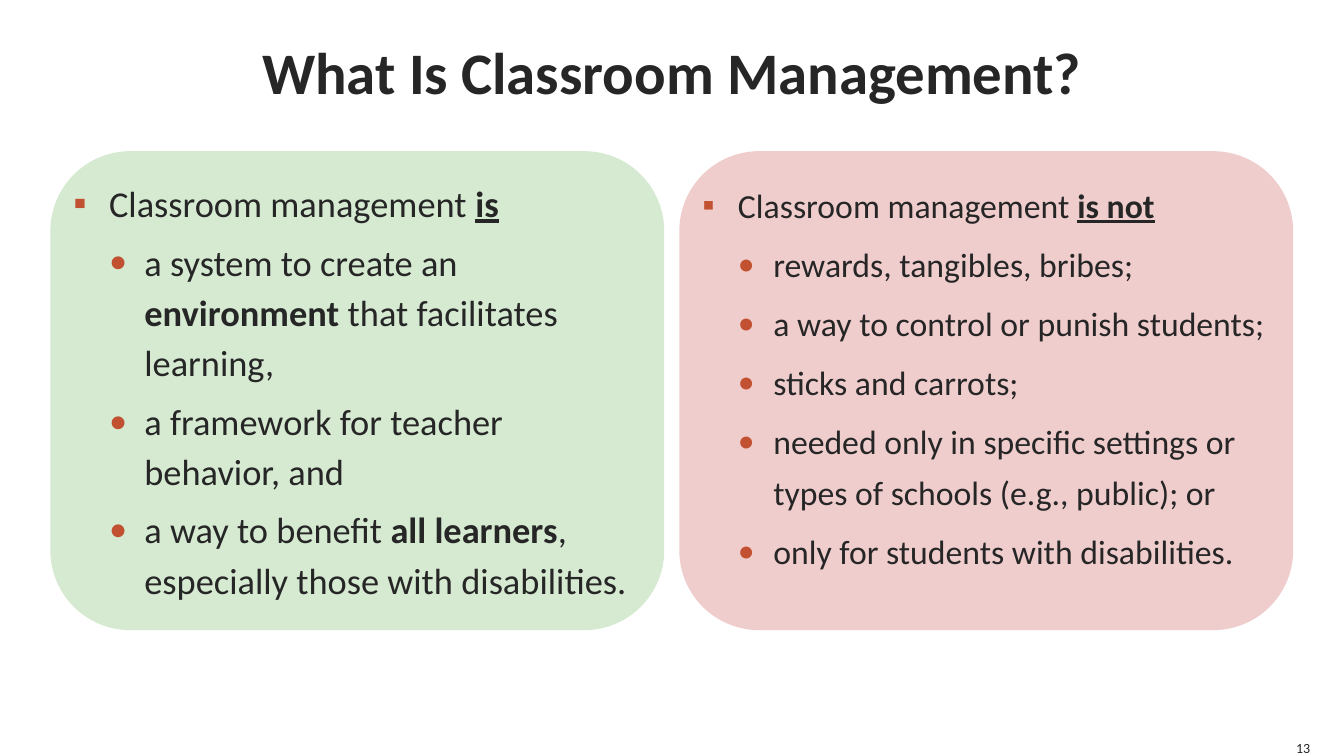
from lxml.etree import SubElement
from pptx import Presentation
from pptx.dml.color import RGBColor
from pptx.enum.text import MSO_ANCHOR, MSO_AUTO_SIZE, PP_ALIGN
from pptx.oxml import parse_xml
from pptx.oxml.ns import nsdecls, qn
from pptx.util import Cm, Pt

INK = RGBColor(0x26, 0x26, 0x26)
RUST = RGBColor(0xC2, 0x51, 0x31)
GREEN = RGBColor(0xD6, 0xEA, 0xD2)
PINK = RGBColor(0xF0, 0xCD, 0xCD)
MARGIN = Cm(1.27)
INDENT = Cm(0.89)
PANEL_WIDTH = Cm(15.47)
PANEL_GAP = Cm(0.38)


def write(shape, paragraphs, size, bold=False, align=PP_ALIGN.LEFT,
          anchor=MSO_ANCHOR.TOP, wrap=True, bullets=False, line_spacing=1.0):
    """Fill a shape with paragraphs, each a list of (text, style) runs."""
    frame = shape.text_frame
    frame.auto_size = MSO_AUTO_SIZE.NONE
    frame.word_wrap = wrap
    frame.vertical_anchor = anchor
    frame.margin_left = frame.margin_right = frame.margin_top = frame.margin_bottom = 0
    for index, runs in enumerate(paragraphs):
        paragraph = frame.add_paragraph() if index else frame.paragraphs[0]
        if bullets:
            # The first paragraph is the lead, the others sit one level below
            paragraph.level = min(index, 1)
            properties = paragraph._p.get_or_add_pPr()
            properties.set("marL", str(INDENT * (paragraph.level + 1)))
            properties.set("indent", str(-INDENT))
            color = SubElement(properties, qn("a:buClr"))
            SubElement(color, qn("a:srgbClr"), val=str(RUST))
            SubElement(properties, qn("a:buFont"), typeface="Calibri")
            SubElement(properties, qn("a:buChar"), char="•" if index else "▪")
        paragraph.alignment = align
        paragraph.line_spacing = line_spacing
        paragraph.space_before = Pt(6 if index else 0)
        for text, style in runs:
            run = paragraph.add_run()
            run.text = text
            run.font.name = "Calibri"
            run.font.size = Pt(size)
            run.font.color.rgb = INK
            run.font.bold = bold or "b" in style
            run.font.underline = "u" in style


presentation = Presentation()
presentation.slide_width = Cm(33.87)
presentation.slide_height = Cm(19.05)
slide = presentation.slides.add_slide(presentation.slide_layouts[3])

# Title
title = slide.shapes.title
title.left, title.top, title.width, title.height = MARGIN, Cm(0), Cm(31.32), Cm(3.56)
write(title, [[("What Is Classroom Management?", "")]], 42, bold=True,
      align=PP_ALIGN.CENTER, anchor=MSO_ANCHOR.MIDDLE)

# Two rounded panels: what it is and what it is not
panels = [
    (GREEN, 26, 1.15, [
        [("Classroom management ", ""), ("is", "bu")],
        [("a system to create an ", ""), ("environment", "b"),
         (" that facilitates learning,", "")],
        [("a framework for teacher behavior, and", "")],
        [("a way to benefit ", ""), ("all learners", "b"),
         (", especially those with disabilities.", "")],
    ]),
    (PINK, 24.1, 1.25, [
        [("Classroom management ", ""), ("is not", "bu")],
        [("rewards, tangibles, bribes;", "")],
        [("a way to control or punish students;", "")],
        [("sticks and carrots;", "")],
        [("needed only in specific settings or types of schools (e.g., public); or", "")],
        [("only for students with disabilities.", "")],
    ]),
]
for column, (fill, size, line_spacing, paragraphs) in enumerate(panels):
    panel = slide.placeholders[column + 1]
    panel.left = MARGIN + column * (PANEL_WIDTH + PANEL_GAP)
    panel.top, panel.width, panel.height = Cm(3.81), PANEL_WIDTH, Cm(12.07)
    panel._element.spPr.append(parse_xml(
        f'<a:prstGeom {nsdecls("a")} prst="roundRect"><a:avLst/></a:prstGeom>'))
    panel.fill.solid()
    panel.fill.fore_color.rgb = fill
    write(panel, paragraphs, size, bullets=True, line_spacing=line_spacing)

# Slide number
number = slide.shapes.add_textbox(Cm(32.59), Cm(18.62), Cm(0.43), Cm(0.43))
write(number, [[("13", "")]], 10, align=PP_ALIGN.RIGHT,
      anchor=MSO_ANCHOR.BOTTOM, wrap=False)

presentation.save("out.pptx")
